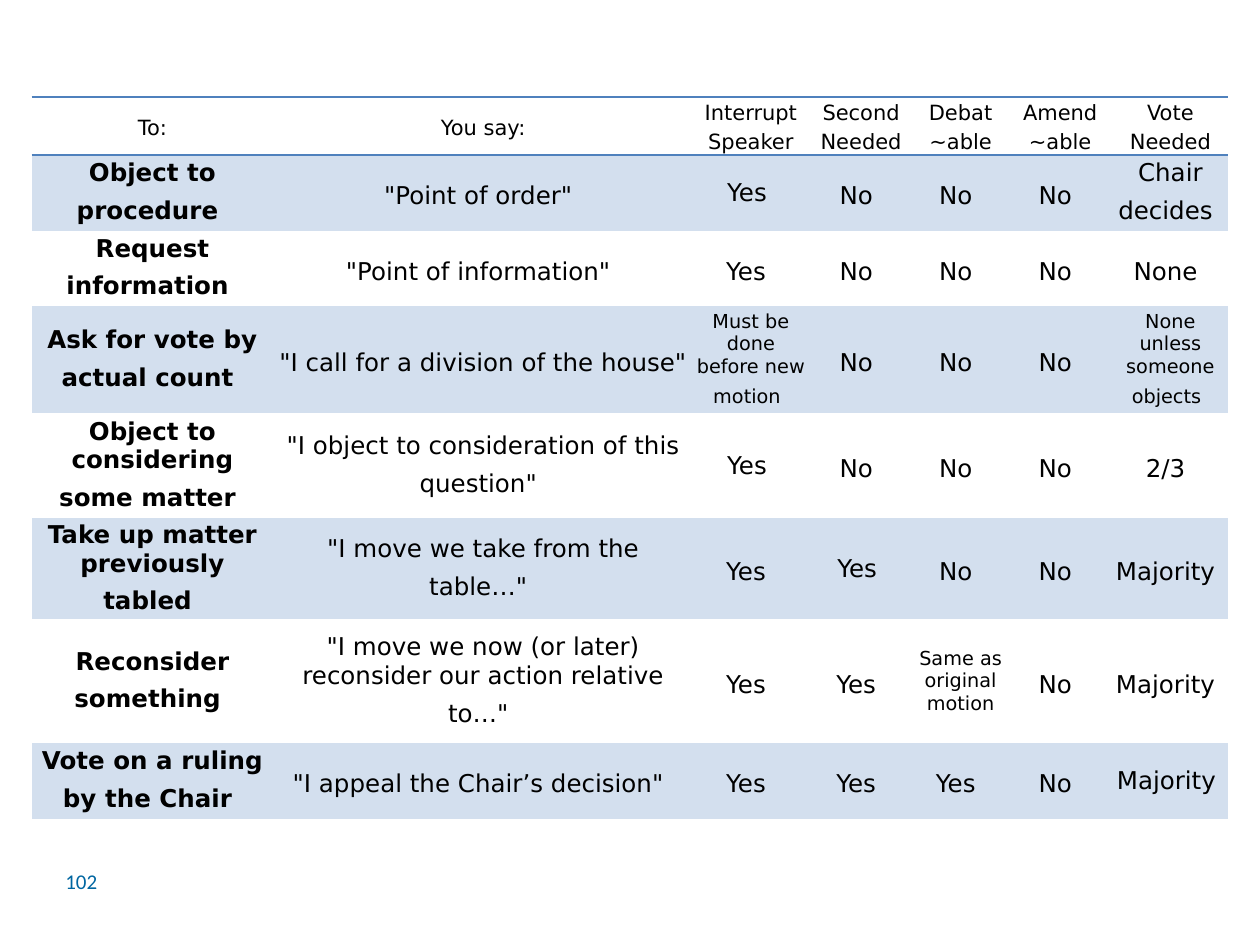
from lxml import etree
from pptx import Presentation
from pptx.dml.color import RGBColor
from pptx.enum import text
from pptx.oxml import ns
from pptx.util import Inches, Pt

COLORS = {"black": "000000", "band": "D3DFEE", "rule": "4F81BD", "number": "0066A1"}
PLAIN_TABLE = "{2D5ABB26-0587-4C30-8999-92F81FD0307C}"

COLUMN_WIDTHS = [1.92, 3.33, 0.92, 0.83, 0.75, 0.83, 0.92]
ROW_HEIGHTS = [0.46, 0.6, 0.6, 0.85, 0.83, 0.6, 0.98, 0.6]
HEADER = ["To:", "You say:", "Interrupt Speaker", "Second Needed",
          "Debat\v~able", "Amend\v~able", "Vote Needed"]
MOTIONS = [
    ["Object to procedure", '"Point of order"', "Yes ", "No", "No", "No", "Chair decides"],
    ["Request information", '"Point of information"', "Yes", "No", "No", "No", "None"],
    ["Ask for vote by actual count", '"I call for a division of the house"',
     "Must be done before new motion", "No", "No", "No", "None unless someone objects"],
    ["Object to considering some matter", '"I object to consideration of this question"',
     "Yes ", "No", "No", "No", "2/3"],
    ["Take up matter previously tabled", '"I move we take from the table…"',
     "Yes", "Yes ", "No", "No", "Majority"],
    ["Reconsider something",
     '"I move we now (or later) reconsider our action relative to…"',
     "Yes", "Yes", "Same as original motion", "No", "Majority"],
    ["Vote on a ruling by the Chair", '"I appeal the Chair’s decision"',
     "Yes", "Yes", "Yes", "No", "Majority "],
]
SMALL_CELLS = {(3, 2), (3, 6), (6, 4)}
UNSPACED_CELLS = {(1, 2), (4, 2), (5, 3), (6, 4), (7, 6)}


class SlideBuilder:
    font = "DejaVu Sans"
    spacer_font = "Arial"

    def __init__(self, slide):
        self.slide = slide

    def style_run(self, run, size, font=None, color="black", bold=False):
        run.font.name = font or self.font
        run.font.size = Pt(size)
        run.font.bold = bold
        run.font.color.rgb = RGBColor.from_string(COLORS[color])

    def add_rules(self, cell):
        properties = cell._tc.get_or_add_tcPr()
        for side in ("lnT", "lnB"):
            line = etree.SubElement(properties, ns.qn(f"a:{side}"), w=str(Pt(1)))
            fill = etree.SubElement(line, ns.qn("a:solidFill"))
            etree.SubElement(fill, ns.qn("a:srgbClr"), val=COLORS["rule"])

    def prepare_cell(self, cell, side_margin, end_margin):
        cell.margin_left = cell.margin_right = Inches(side_margin)
        cell.margin_top = cell.margin_bottom = Inches(end_margin)
        cell.vertical_anchor = text.MSO_ANCHOR.MIDDLE
        paragraph = cell.text_frame.paragraphs[0]
        paragraph.alignment = text.PP_ALIGN.CENTER
        return paragraph

    def header_cell(self, cell, label):
        paragraph = self.prepare_cell(cell, 0.05, 0)
        paragraph.line_spacing = 1.15
        paragraph.text = label
        for run in paragraph.runs:
            self.style_run(run, 12)
        self.add_rules(cell)
        cell.fill.background()

    def body_cell(self, cell, label, row, column):
        paragraph = self.prepare_cell(cell, 0.02, 0.02)
        paragraph.text = label
        size, spacer_size = (11, 16) if (row, column) in SMALL_CELLS else (14, 20)
        bold = column == 0
        self.style_run(paragraph.runs[0], size, bold=bold)
        if (row, column) not in UNSPACED_CELLS:
            spacer = paragraph.add_run()
            spacer.text = " "
            self.style_run(spacer, spacer_size, self.spacer_font, bold=bold)
        if row % 2:
            cell.fill.solid()
            cell.fill.fore_color.rgb = RGBColor.from_string(COLORS["band"])
        else:
            cell.fill.background()

    def add_motion_table(self, left, top):
        frame = self.slide.shapes.add_table(
            len(ROW_HEIGHTS), len(COLUMN_WIDTHS), Inches(left), Inches(top),
            Inches(sum(COLUMN_WIDTHS)), Inches(sum(ROW_HEIGHTS)))
        table = frame.table
        table.first_row = table.horz_banding = False
        table._tbl.tblPr.find(ns.qn("a:tableStyleId")).text = PLAIN_TABLE
        for column, width in zip(table.columns, COLUMN_WIDTHS):
            column.width = Inches(width)
        for row, height in zip(table.rows, ROW_HEIGHTS):
            row.height = Inches(height)
        for column, label in enumerate(HEADER):
            self.header_cell(table.cell(0, column), label)
        for row, motion in enumerate(MOTIONS, start=1):
            for column, label in enumerate(motion):
                self.body_cell(table.cell(row, column), label, row, column)

    def add_page_number(self, label, left, top, width, height):
        box = self.slide.shapes.add_textbox(
            Inches(left), Inches(top), Inches(width), Inches(height))
        frame = box.text_frame
        frame.word_wrap = True
        frame.vertical_anchor = text.MSO_ANCHOR.MIDDLE
        frame.text = label
        self.style_run(frame.paragraphs[0].runs[0], 12, "Calibri", "number")


def main():
    presentation = Presentation()
    presentation.slide_width = Inches(10)
    presentation.slide_height = Inches(7.5)
    builder = SlideBuilder(presentation.slides.add_slide(presentation.slide_layouts[6]))
    builder.add_motion_table(0.25, 0.77)
    builder.add_page_number("102", 0.42, 6.79, 0.53, 0.4)
    presentation.save("out.pptx")


if __name__ == "__main__":
    main()
